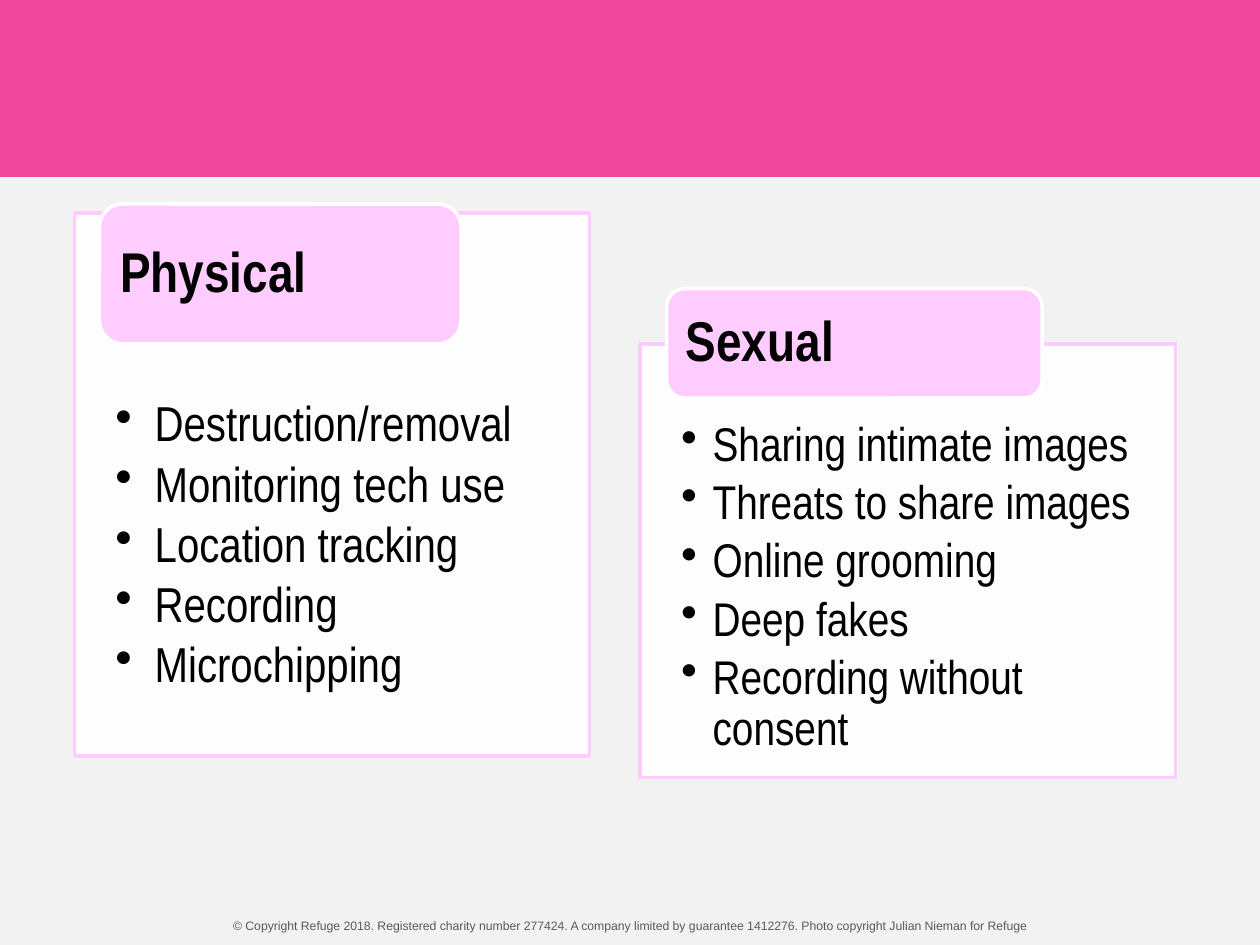
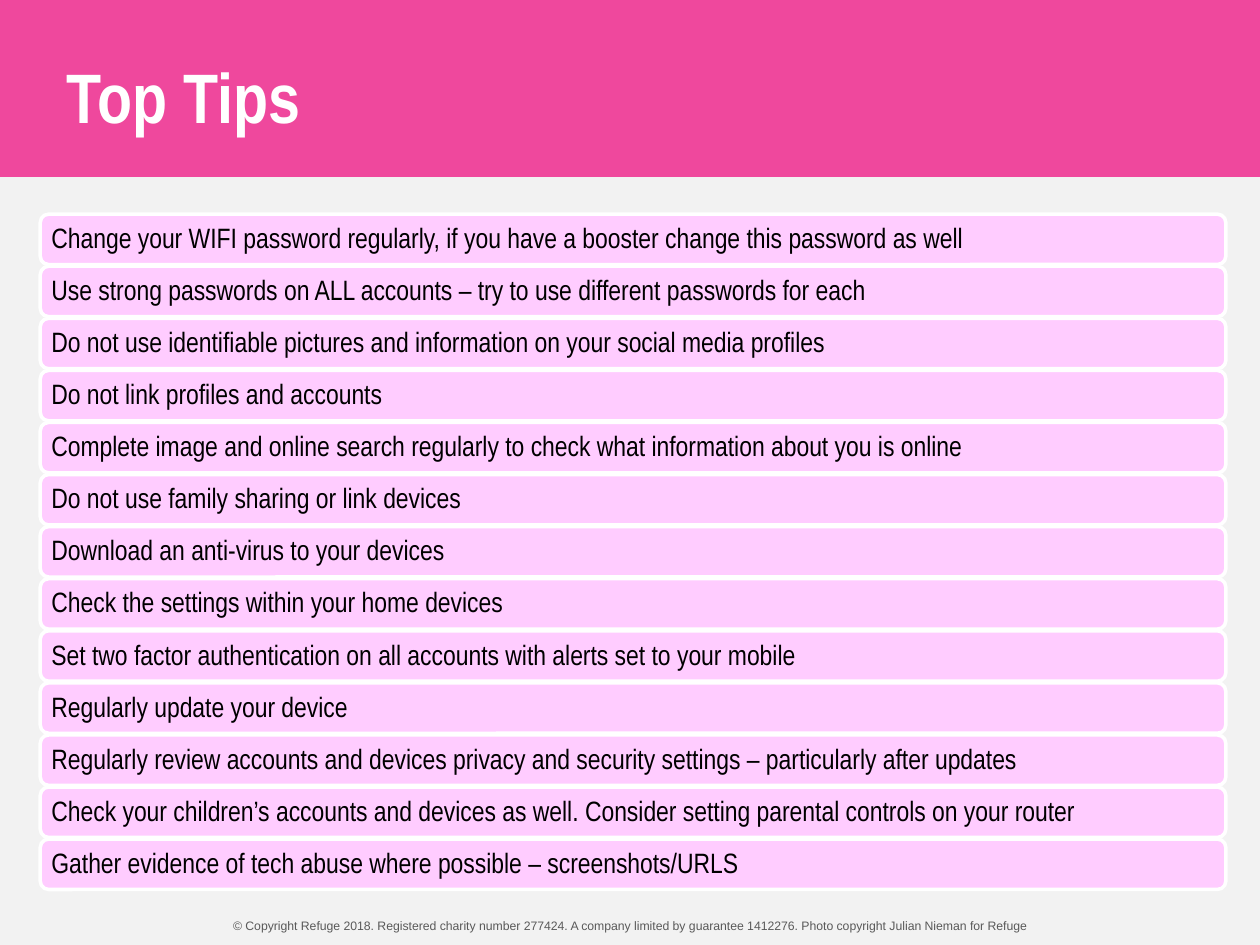
from dataclasses import dataclass

from lxml.etree import SubElement
from pptx import Presentation
from pptx.dml.color import RGBColor
from pptx.enum.shapes import MSO_SHAPE as SHAPE
from pptx.enum.text import MSO_ANCHOR as ANCHOR, PP_ALIGN as ALIGN
from pptx.oxml.ns import qn
from pptx.util import Pt


@dataclass(frozen=True)
class Theme:
    background: str = "F2F2F2"
    band: str = "EF489D"
    pale_pink: str = "FFCCFF"
    white: str = "FFFFFF"
    ink: str = "000000"
    grey: str = "595959"
    font: str = "Arial Narrow"
    footer_font: str = "Arial"
    title_size: int = 40
    heading_size: int = 32
    tip_size: int = 16
    footer_size: int = 7


THEME = Theme()
FOOTER = (
    "© Copyright Refuge 2018. Registered charity number 277424. "
    "A company limited by guarantee 1412276. "
    "Photo copyright Julian Nieman for Refuge"
)
CARDS = [
    dict(
        heading="Physical",
        panel=(42.5, 121.7, 294.5, 310.3),
        tab=(56.9, 116.6, 206.6, 79.9),
        top_inset=106.6, indent=22.5, size=28,
        points=["Destruction/removal", "Monitoring tech use", "Location tracking",
                "Recording", "Microchipping"],
    ),
    dict(
        heading="Sexual",
        panel=(365.8, 196.6, 306, 247.7),
        tab=(380.9, 164.9, 214.6, 62.6),
        top_inset=43.9, indent=18, size=27,
        points=["Sharing intimate images", "Threats to share images", "Online grooming",
                "Deep fakes", "Recording without consent"],
    ),
]
TIPS = [
    "Change your WIFI password regularly, if you have a booster change this password as well",
    "Use strong passwords on ALL accounts – try to use different passwords for each",
    "Do not use identifiable pictures and information on your social media profiles",
    "Do not link profiles and accounts",
    "Complete image and online search regularly to check what information about you is online",
    "Do not use family sharing or link devices",
    "Download an anti-virus to your devices",
    "Check the settings within your home devices",
    "Set two factor authentication on all accounts with alerts set to your mobile",
    "Regularly update your device",
    "Regularly review accounts and devices privacy and security settings – particularly after updates",
    "Check your children’s accounts and devices as well. Consider setting parental controls on your router",
    "Gather evidence of tech abuse where possible – screenshots/URLS",
]
TIP_TOP, TIP_PITCH, TIP_HEIGHT = 122.4, 29.76, 28.8


def add_box(slide, kind, rect, fill, line):
    sp = slide.shapes.add_shape(kind, *map(Pt, rect))
    sp.shadow.inherit = False
    sp.fill.solid()
    sp.fill.fore_color.rgb = RGBColor.from_string(fill)
    sp.line.color.rgb = RGBColor.from_string(line)
    sp.line.width = Pt(2)
    return sp


def write(sp, *lines, size, color=THEME.ink, font=THEME.font, bold=False,
          align=ALIGN.LEFT, anchor=ANCHOR.MIDDLE, insets=(7.2, 3.6, 7.2, 3.6),
          spacing=0.9, after=0, indent=0):
    """Fill a shape with one paragraph per line; a non-zero indent adds bullets."""
    tf = sp.text_frame
    tf.word_wrap = True
    tf.vertical_anchor = anchor
    tf.margin_left, tf.margin_top, tf.margin_right, tf.margin_bottom = map(Pt, insets)
    for i, line in enumerate(lines):
        p = tf.add_paragraph() if i else tf.paragraphs[0]
        p.alignment = align
        p.line_spacing = spacing
        p.space_after = Pt(after)
        if indent:
            pPr = p._p.get_or_add_pPr()
            pPr.set("marL", str(Pt(indent)))
            pPr.set("indent", str(-Pt(indent)))
            SubElement(pPr, qn("a:buChar"), char="•")
        r = p.add_run()
        r.text = line
        r.font.name = font
        r.font.size = Pt(size)
        r.font.bold = bold
        r.font.color.rgb = RGBColor.from_string(color)


prs = Presentation()
prs.slide_width, prs.slide_height = Pt(720), Pt(540)
abuse_slide, tips_slide = [prs.slides.add_slide(prs.slide_layouts[6]) for _ in range(2)]

# Shared background, band and footer
for slide in prs.slides:
    slide.background.fill.solid()
    slide.background.fill.fore_color.rgb = RGBColor.from_string(THEME.background)
    add_box(slide, SHAPE.RECTANGLE, (0, 0, 720, 100), THEME.band, THEME.band)
    footer = slide.shapes.add_textbox(Pt(0), Pt(521.3), Pt(720), Pt(15.8))
    write(footer, FOOTER, size=THEME.footer_size, color=THEME.grey,
          font=THEME.footer_font, align=ALIGN.CENTER, anchor=ANCHOR.TOP, spacing=1)

# Slide 1: two kinds of abuse
for card in CARDS:
    panel = add_box(abuse_slide, SHAPE.RECTANGLE, card["panel"], THEME.white, THEME.pale_pink)
    panel_color = panel.fill._xPr.find(qn("a:solidFill"))[0]
    SubElement(panel_color, qn("a:alpha"), val="90000")
    write(panel, *card["points"], size=card["size"], anchor=ANCHOR.TOP,
          insets=(23.4, card["top_inset"], 23.4, 15.5),
          after=round(0.15 * card["size"], 1), indent=card["indent"])
    tab = add_box(abuse_slide, SHAPE.ROUNDED_RECTANGLE, card["tab"],
                  THEME.pale_pink, THEME.white)
    write(tab, card["heading"], size=THEME.heading_size, bold=True, insets=(8, 0, 8, 0))

# Slide 2: tips in evenly spaced rows
title = tips_slide.shapes.add_textbox(Pt(31), Pt(9.4), Pt(532.8), Pt(90))
write(title, "Top Tips", size=THEME.title_size, color=THEME.white, bold=True, spacing=1)
for i, tip in enumerate(TIPS):
    row = add_box(tips_slide, SHAPE.ROUNDED_RECTANGLE,
                  (23, TIP_TOP + i * TIP_PITCH, 677.5, TIP_HEIGHT),
                  THEME.pale_pink, THEME.white)
    write(row, tip, size=THEME.tip_size, insets=(5, 0, 5, 0))

prs.save("out.pptx")
